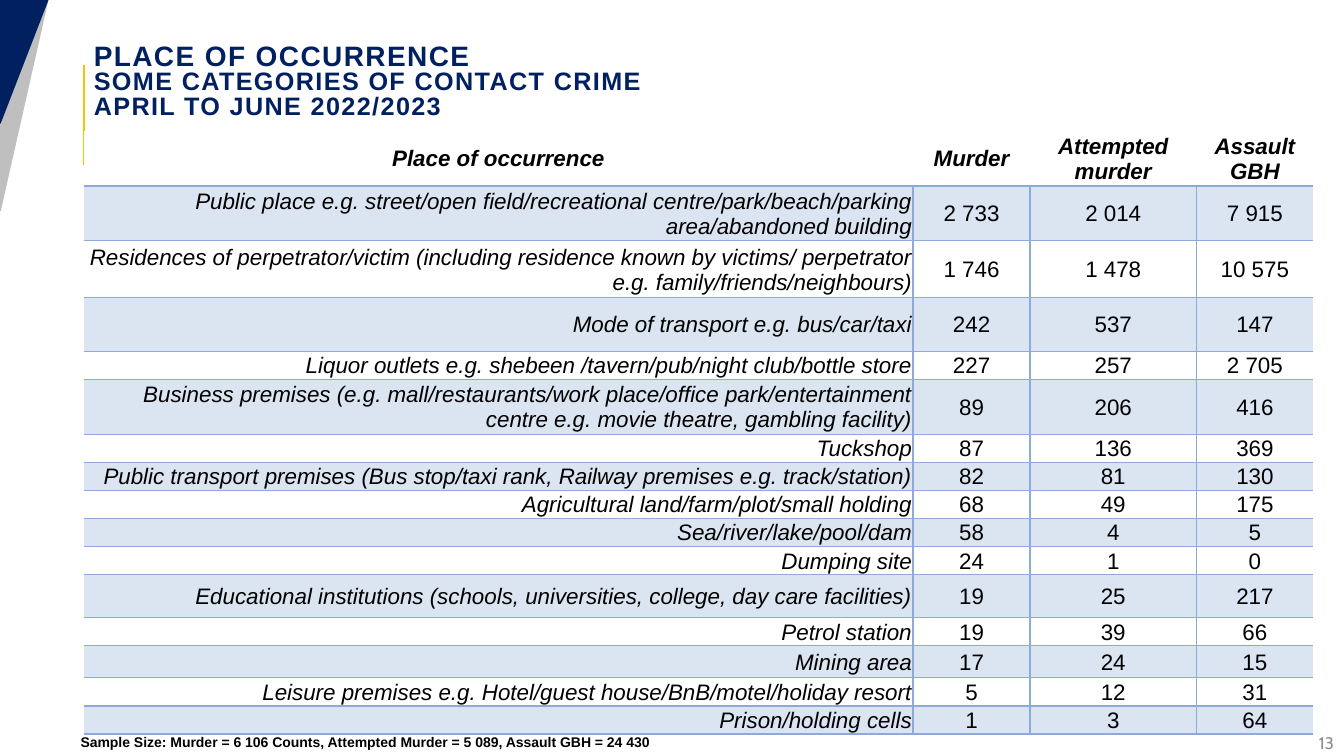
import pptx
import pptx.dml.color
import pptx.enum.shapes
import pptx.enum.text
import pptx.oxml
import pptx.oxml.ns
import pptx.util

Cm = pptx.util.Cm
Pt = pptx.util.Pt
ALIGN = pptx.enum.text.PP_ALIGN
MIDDLE = pptx.enum.text.MSO_ANCHOR.MIDDLE


def tint(code):
    return pptx.dml.color.RGBColor.from_string(code)


class Page:
    """Hold the style and the current slide, and draw its elements."""

    navy, grey, gold = "002060", "BFBFBF", "FFC000"
    rule, band, white, black = "8EAADB", "DBE5F1", "FFFFFF", "000000"
    face = "Arial"

    def __init__(self, deck):
        self.slide = deck.slides.add_slide(deck.slide_layouts[5])
        self.shapes = self.slide.shapes

    def style(self, run, size, color, bold=False, slant=False, face=None):
        font = run.font
        font.name = face or self.face
        font.size = Pt(size)
        font.bold = bold
        font.italic = slant
        font.color.rgb = tint(color)

    def line(self, x, top, end, color):
        line = self.shapes.add_connector(
            pptx.enum.shapes.MSO_CONNECTOR.STRAIGHT, Cm(x), Cm(end), Cm(x), Cm(top))
        line.line.color.rgb = tint(color)
        line.line.width = Pt(1.5)
        line.element.spPr.append(pptx.oxml.parse_xml(
            f"<a:effectLst {pptx.oxml.ns.nsdecls('a')}/>"))

    def corner(self, width, height, color):
        shape = self.shapes.add_shape(
            pptx.enum.shapes.MSO_SHAPE.RIGHT_TRIANGLE, 0, 0, Cm(width), Cm(height))
        shape.element.spPr.xfrm.set("flipV", "1")
        shape.shadow.inherit = False
        shape.fill.solid()
        shape.fill.fore_color.rgb = tint(color)
        shape.line.color.rgb = tint(color)
        shape.line.width = Pt(1.25)

    def title(self, lines, sizes, box):
        shape = self.shapes.title
        shape.left, shape.top, shape.width, shape.height = map(Cm, box)
        frame = shape.text_frame
        frame.auto_size = pptx.enum.text.MSO_AUTO_SIZE.NONE
        frame.vertical_anchor = MIDDLE
        frame.word_wrap = True
        para = frame.paragraphs[0]
        para.text = "\v".join(lines)
        para.alignment = ALIGN.LEFT
        para.line_spacing = 0.8
        for run, size in zip(para.runs, sizes):
            self.style(run, size, self.navy, bold=True)
            run.font._element.set("spc", "100")

    def text(self, words, box, size, color, bold=False, align=ALIGN.LEFT,
             anchor=pptx.enum.text.MSO_ANCHOR.TOP, face=None):
        frame = self.shapes.add_textbox(*map(Cm, box)).text_frame
        frame.word_wrap = True
        frame.vertical_anchor = anchor
        frame.text = words
        para = frame.paragraphs[0]
        para.alignment = align
        self.style(para.runs[0], size, color, bold, face=face)

    def edges(self, cell, widths):
        props = cell._tc.get_or_add_tcPr()
        for side, width in zip("LRTB", widths):
            fill = (f'<a:solidFill><a:srgbClr val="{self.rule}"/></a:solidFill>'
                    if width else "<a:noFill/>")
            props.append(pptx.oxml.parse_xml(
                f'<a:ln{side} {pptx.oxml.ns.nsdecls("a")} w="{Pt(width)}">'
                f"{fill}</a:ln{side}>"))

    def cell(self, cell, words, row, col, last):
        head = row == 0
        self.edges(cell, (
            0 if head or col == 0 else 1,
            0 if head or col == last else 1,
            0 if head else 1.5 if row == 1 else 1,
            1.5 if head else 1))
        cell.fill.solid()
        cell.fill.fore_color.rgb = tint(self.band if row % 2 else self.white)
        cell.margin_left = cell.margin_right = cell.margin_top = Cm(0.03)
        cell.margin_bottom = 0
        cell.vertical_anchor = MIDDLE
        cell.text_frame.text = words
        para = cell.text_frame.paragraphs[0]
        para.alignment = ALIGN.CENTER if head or col else ALIGN.RIGHT
        self.style(para.runs[0], 16, self.black, head, head or col == 0)

    def table(self, rows, heights, widths, left, top):
        table = self.shapes.add_table(
            len(rows), len(widths), Cm(left), Cm(top),
            Cm(sum(widths)), Cm(sum(heights))).table
        for col, width in zip(table.columns, widths):
            col.width = Cm(width)
        for row, height in zip(table.rows, heights):
            row.height = Cm(height)
        for r, row in enumerate(rows):
            for c, words in enumerate(row):
                self.cell(table.cell(r, c), words, r, c, len(widths) - 1)


ROWS = [
    (1.35, "Place of occurrence", "Murder", "Attempted murder", "Assault GBH"),
    (1.35, "Public place e.g. street/open field/recreational centre/park/beach/parking "
     "area/abandoned building", "2 733", "2 014", "7 915"),
    (1.43, "Residences of perpetrator/victim (including residence known by victims/ "
     "perpetrator e.g. family/friends/neighbours)", "1 746", "1 478", "10 575"),
    (1.35, "Mode of transport e.g. bus/car/taxi", "242", "537", "147"),
    (0.69, "Liquor outlets e.g. shebeen /tavern/pub/night club/bottle store",
     "227", "257", "2 705"),
    (1.35, "Business premises (e.g. mall/restaurants/work place/office park/entertainment "
     "centre e.g. movie theatre, gambling facility)", "89", "206", "416"),
    (0.69, "Tuckshop", "87", "136", "369"),
    (0.69, "Public transport premises (Bus stop/taxi rank, Railway premises e.g. "
     "track/station)", "82", "81", "130"),
    (0.69, "Agricultural land/farm/plot/small holding", "68", "49", "175"),
    (0.69, "Sea/river/lake/pool/dam", "58", "4", "5"),
    (0.69, "Dumping site", "24", "1", "0"),
    (1.08, "Educational institutions (schools, universities, college, day care "
     "facilities)", "19", "25", "217"),
    (0.69, "Petrol station", "19", "39", "66"),
    (0.81, "Mining area", "17", "24", "15"),
    (0.69, "Leisure premises e.g. Hotel/guest house/BnB/motel/holiday resort",
     "5", "12", "31"),
    (0.69, "Prison/holding cells", "1", "3", "64"),
]


def main():
    deck = pptx.Presentation()
    deck.slide_width, deck.slide_height = Cm(33.87), Cm(19.05)
    page = Page(deck)
    page.line(2.11, 1.63, 4.17, page.gold)
    page.corner(1.2, 5.31, page.grey)
    page.corner(1.2, 3.1, page.navy)
    page.title(
        ["PLACE OF OCCURRENCE", "SOME CATEGORIES OF CONTACT CRIME",
         "APRIL TO JUNE 2022/2023"], (20, 18, 18), (2.11, 0.64, 20.6, 2.87))
    page.text("13", (27.94, 18.21, 5.93, 1.02), 12, "8C8C8C",
              align=ALIGN.RIGHT, anchor=MIDDLE, face="Cabin")
    page.table([row[1:] for row in ROWS], [row[0] for row in ROWS],
               (20.9, 2.95, 4.19, 2.95), 2.11, 3.3)
    page.text("Sample Size: Murder = 6 106 Counts, Attempted Murder = 5 089, "
              "Assault GBH = 24 430", (1.78, 18.36, 16.33, 0.69), 10,
              page.black, bold=True)
    deck.save("out.pptx")


if __name__ == "__main__":
    main()
